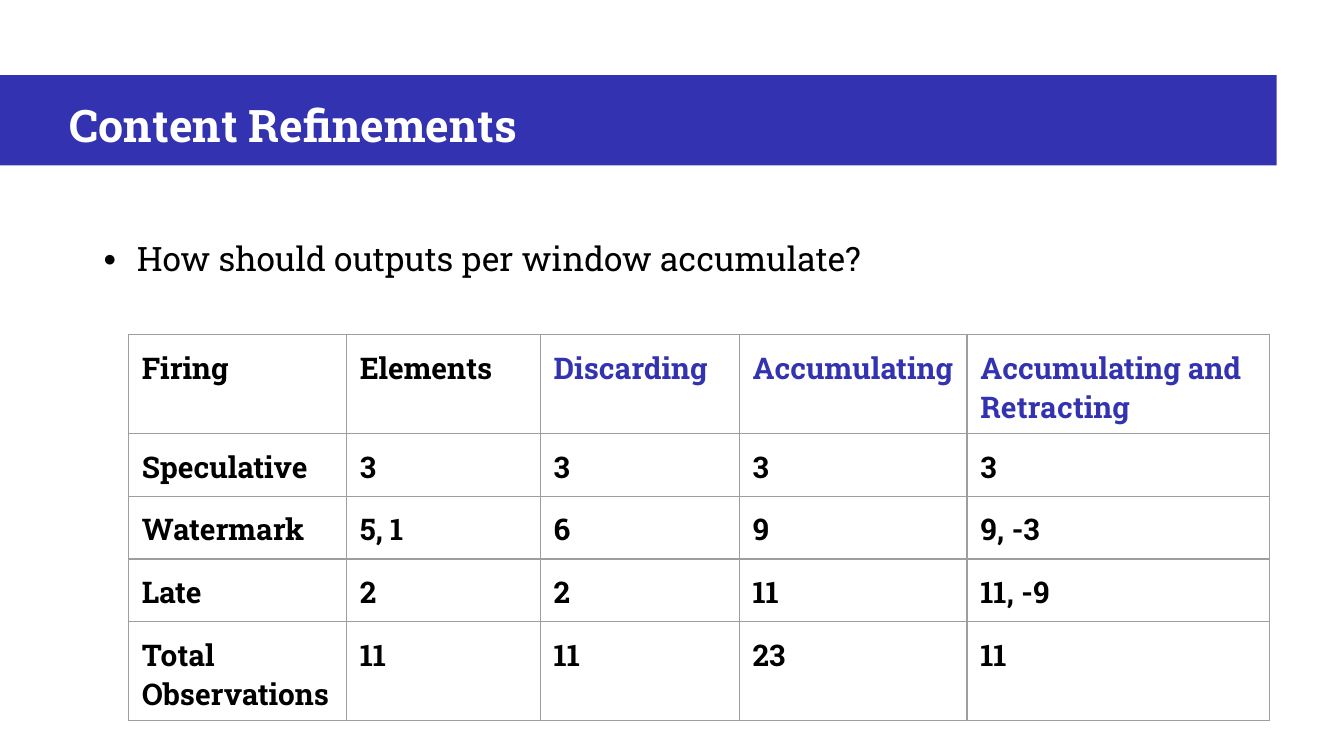
from dataclasses import dataclass

from lxml import etree
from pptx import Presentation
from pptx import util as u
from pptx.dml.color import RGBColor
from pptx.enum import shapes, text
from pptx.oxml import ns


@dataclass(frozen=True)
class Theme:
    font: str = "Roboto Slab"
    bullet_font: str = "Arial"
    accent: str = "3333B2"
    ink: str = "000000"
    paper: str = "FFFFFF"
    border: str = "9E9E9E"
    border_width: float = 0.75
    title_size: int = 24
    body_size: int = 18
    table_size: int = 16
    inset: float = 0.1


THEME = Theme()
WIDTH = u.Inches(10)
HEIGHT = u.Emu(WIDTH * 9 // 16)

COLUMN_SHARES = (16.22, 14.43, 14.8, 16.95, 22.5)
ROW_SHARE = 7.5
ACCENT_COLUMNS = (2, 3, 4)
FIRINGS = (
    ("Firing", "Elements", "Discarding", "Accumulating", "Accumulating and Retracting"),
    ("Speculative", "3", "3", "3", "3"),
    ("Watermark", "5, 1", "6", "9", "9, -3"),
    ("Late", "2", "2", "11", "11, -9"),
    ("Total Observations", "11", "11", "23", "11"),
)


def across(percent):
    return u.Emu(round(WIDTH * percent / 100))


def down(percent):
    return u.Emu(round(HEIGHT * percent / 100))


def area(left, top, width, height):
    return across(left), down(top), across(width), down(height)


def set_insets(holder):
    for side in ("left", "top", "right", "bottom"):
        setattr(holder, f"margin_{side}", u.Inches(THEME.inset))


def write(frame, content, size, color=THEME.ink, bold=False, spacing=1.0):
    frame.word_wrap = True
    para = frame.paragraphs[0]
    para.alignment = text.PP_ALIGN.LEFT
    para.line_spacing = spacing
    span = para.add_run()
    span.text = content
    span.font.name = THEME.font
    span.font.size = u.Pt(size)
    span.font.bold = bold
    span.font.color.rgb = RGBColor.from_string(color)
    return para


def add_child(parent, tag, **attributes):
    return etree.SubElement(parent, ns.qn(tag), **attributes)


def add_bullet(para):
    properties = para._p.get_or_add_pPr()
    properties.set("marL", str(u.Inches(0.5)))
    properties.set("indent", str(u.Inches(-0.25)))
    add_child(add_child(properties, "a:buClr"), "a:srgbClr", val=THEME.ink)
    add_child(properties, "a:buSzPct", val="67000")
    add_child(properties, "a:buFont", typeface=THEME.bullet_font)
    add_child(properties, "a:buChar", char="●")


def add_borders(cell):
    properties = cell._tc.get_or_add_tcPr()
    for side in ("a:lnL", "a:lnR", "a:lnT", "a:lnB"):
        line = add_child(properties, side, w=str(u.Pt(THEME.border_width)))
        add_child(add_child(line, "a:solidFill"), "a:srgbClr", val=THEME.border)


def add_title(page, content):
    title = page.shapes.title
    title.left, title.top, title.width, title.height = area(4.2, 5.6, 90, 16.2)
    band = page.shapes.add_shape(shapes.MSO_SHAPE.RECTANGLE, *area(0, 9.95, 95, 11.92))
    band.shadow.inherit = False
    band.fill.solid()
    band.fill.fore_color.rgb = RGBColor.from_string(THEME.accent)
    band.line.fill.background()
    title._element.addprevious(band._element)
    frame = title.text_frame
    set_insets(frame)
    frame.auto_size = text.MSO_AUTO_SIZE.NONE
    frame.vertical_anchor = text.MSO_ANCHOR.BOTTOM
    write(frame, content, THEME.title_size, color=THEME.paper, bold=True)


def add_question(page, content):
    box = page.shapes.add_textbox(*area(4.2, 28.4, 90, 67.4))
    set_insets(box.text_frame)
    add_bullet(write(box.text_frame, content, THEME.body_size, spacing=1.25))


def add_firing_table(page):
    place = area(9.55, 44.3, 32.8, 58.3)
    holder = page.shapes.add_table(len(FIRINGS), len(COLUMN_SHARES), *place)
    table = holder.table
    table.first_row = table.horz_banding = False
    for column, share in zip(table.columns, COLUMN_SHARES):
        column.width = across(share)
    for row_index, values in enumerate(FIRINGS):
        table.rows[row_index].height = down(ROW_SHARE)
        for column_index, value in enumerate(values):
            cell = table.cell(row_index, column_index)
            set_insets(cell)
            add_borders(cell)
            cell.fill.background()
            accented = row_index == 0 and column_index in ACCENT_COLUMNS
            color = THEME.accent if accented else THEME.ink
            write(cell.text_frame, value, THEME.table_size, color=color, bold=True)
    holder.left, holder.top, holder.width, holder.height = place


def main():
    deck = Presentation()
    deck.slide_width, deck.slide_height = WIDTH, HEIGHT
    page = deck.slides.add_slide(deck.slide_layouts.get_by_name("Title Only"))
    add_title(page, "Content Refinements")
    add_question(page, "How should outputs per window accumulate?")
    add_firing_table(page)
    deck.save("out.pptx")


if __name__ == "__main__":
    main()
